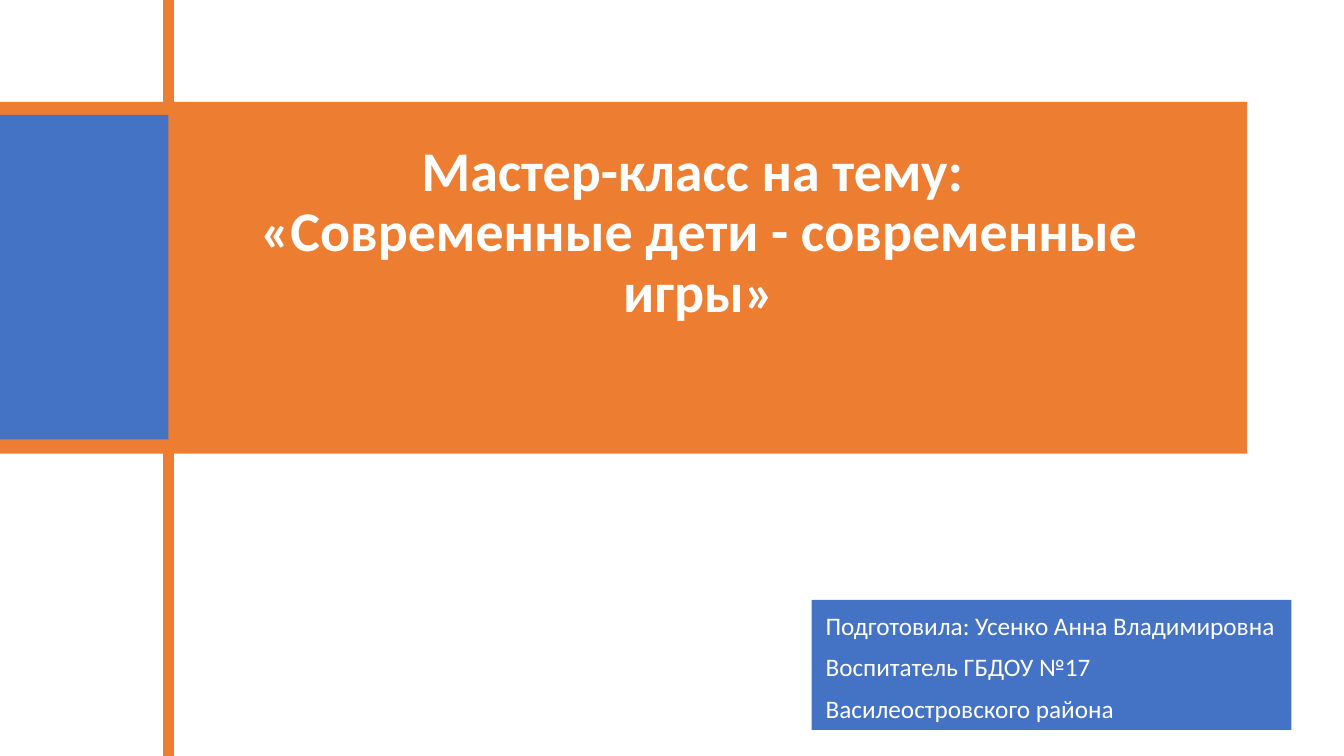
from dataclasses import dataclass

from lxml.etree import SubElement
from pptx import Presentation
from pptx.dml.color import RGBColor
from pptx.enum.shapes import MSO_CONNECTOR, MSO_SHAPE
from pptx.enum.text import MSO_ANCHOR, MSO_AUTO_SIZE, PP_ALIGN
from pptx.oxml.ns import qn
from pptx.slide import Slide
from pptx.text.text import TextFrame
from pptx.util import Inches, Pt

COLORS = {"blue": "4472C4", "orange": "ED7D31", "white": "FFFFFF"}
FONT = "Calibri"
SLIDE_WIDTH, SLIDE_HEIGHT = 13.33, 7.5
RULE_X = 1.67


@dataclass
class Block:
    left: float
    top: float
    width: float
    height: float
    color: str


AUTHOR_PANEL = Block(8.05, 5.95, 4.76, 1.29, "blue")
TITLE_BAND = Block(0, 1.01, 12.37, 3.49, "orange")
SIDE_BLOCK = Block(0, 1.14, RULE_X, 3.22, "blue")

TITLE = "Мастер-класс на тему: \v«Современные дети - современные игры»"
AUTHOR_LINES = [
    "Подготовила: Усенко Анна Владимировна",
    "Воспитатель ГБДОУ №17",
    "Василеостровского района",
]


def color(name: str) -> RGBColor:
    return RGBColor.from_string(COLORS[name])


def add_block(slide: Slide, block: Block) -> None:
    shape = slide.shapes.add_shape(
        MSO_SHAPE.RECTANGLE, Inches(block.left), Inches(block.top),
        Inches(block.width), Inches(block.height))
    shape.shadow.inherit = False
    shape.fill.solid()
    shape.fill.fore_color.rgb = color(block.color)
    shape.line.fill.background()


def add_vertical_rule(slide: Slide) -> None:
    rule = slide.shapes.add_connector(
        MSO_CONNECTOR.STRAIGHT, Inches(RULE_X), 0, Inches(RULE_X), Inches(SLIDE_HEIGHT))
    rule.line.color.rgb = color("orange")
    rule.line.width = Pt(8)
    SubElement(rule.element.spPr, qn("a:effectLst"))


def format_text(frame: TextFrame, size: int, bold: bool, alignment: PP_ALIGN) -> None:
    frame.word_wrap = True
    frame.auto_size = MSO_AUTO_SIZE.NONE
    for index, paragraph in enumerate(frame.paragraphs):
        paragraph.alignment = alignment
        paragraph.line_spacing = 0.9
        paragraph.space_before = Pt(10 if index else 0)
        for run in paragraph.runs:
            run.font.name = FONT
            run.font.size = Pt(size)
            run.font.bold = bold
            run.font.color.rgb = color("white")


def place_title(slide: Slide) -> None:
    """Fill the title placeholder and bring it in front of the band."""
    title = slide.shapes.title
    title.left, title.top = Inches(1.93), Inches(1.38)
    title.width, title.height = Inches(10), Inches(1.89)
    title.text_frame.text = TITLE
    title.text_frame.vertical_anchor = MSO_ANCHOR.BOTTOM
    format_text(title.text_frame, 40, True, PP_ALIGN.CENTER)
    title.element.getparent().append(title.element)


def add_author(slide: Slide) -> None:
    box = slide.shapes.add_textbox(Inches(8.09), Inches(6.04), Inches(5.24), Inches(1.11))
    box.text_frame.text = "\n".join(AUTHOR_LINES)
    format_text(box.text_frame, 18, False, PP_ALIGN.LEFT)


def main() -> None:
    presentation = Presentation()
    presentation.slide_width = Inches(SLIDE_WIDTH)
    presentation.slide_height = Inches(SLIDE_HEIGHT)
    slide = presentation.slides.add_slide(presentation.slide_layouts[5])
    add_block(slide, AUTHOR_PANEL)
    add_block(slide, TITLE_BAND)
    place_title(slide)
    add_author(slide)
    add_vertical_rule(slide)
    add_block(slide, SIDE_BLOCK)
    presentation.save("out.pptx")


if __name__ == "__main__":
    main()
